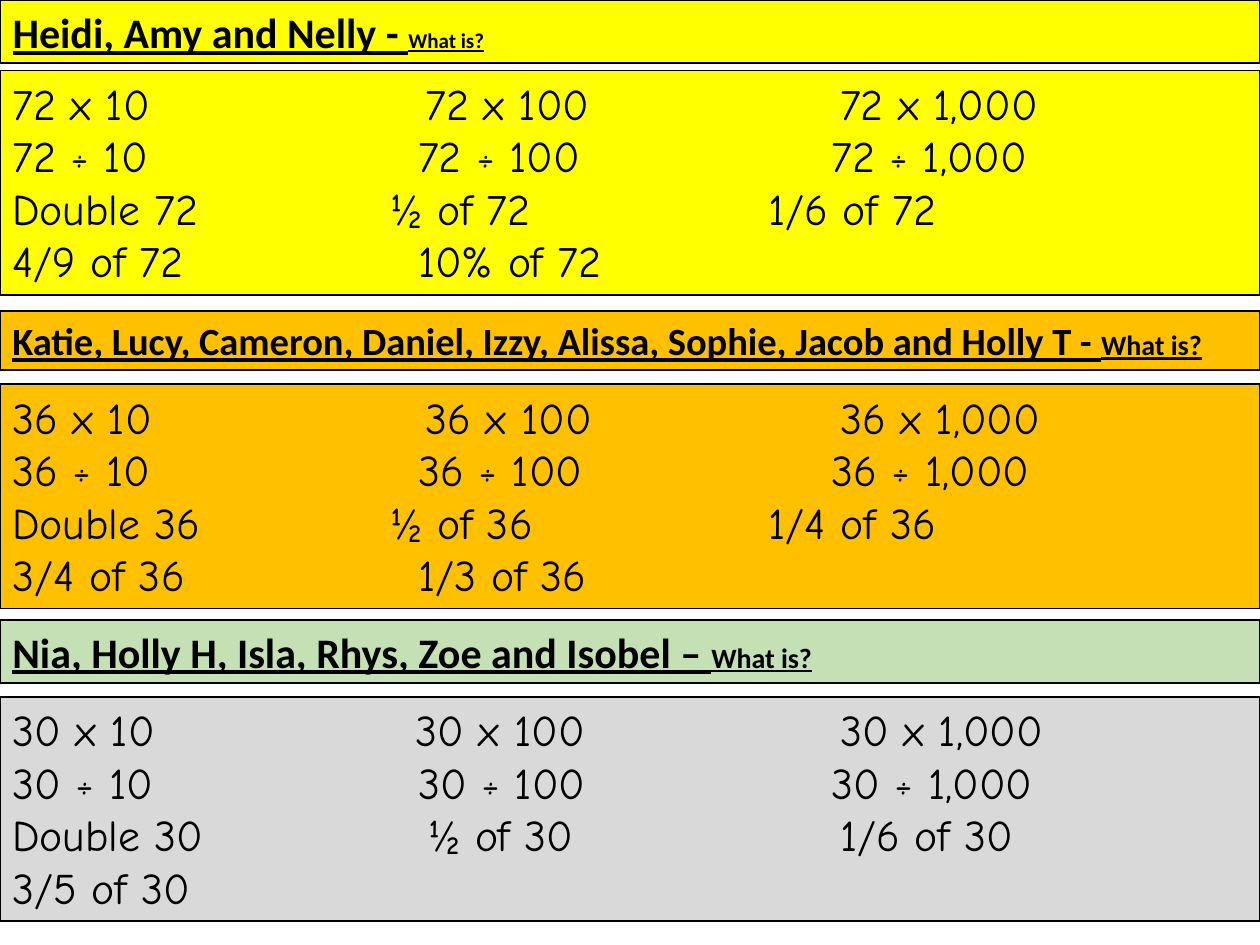
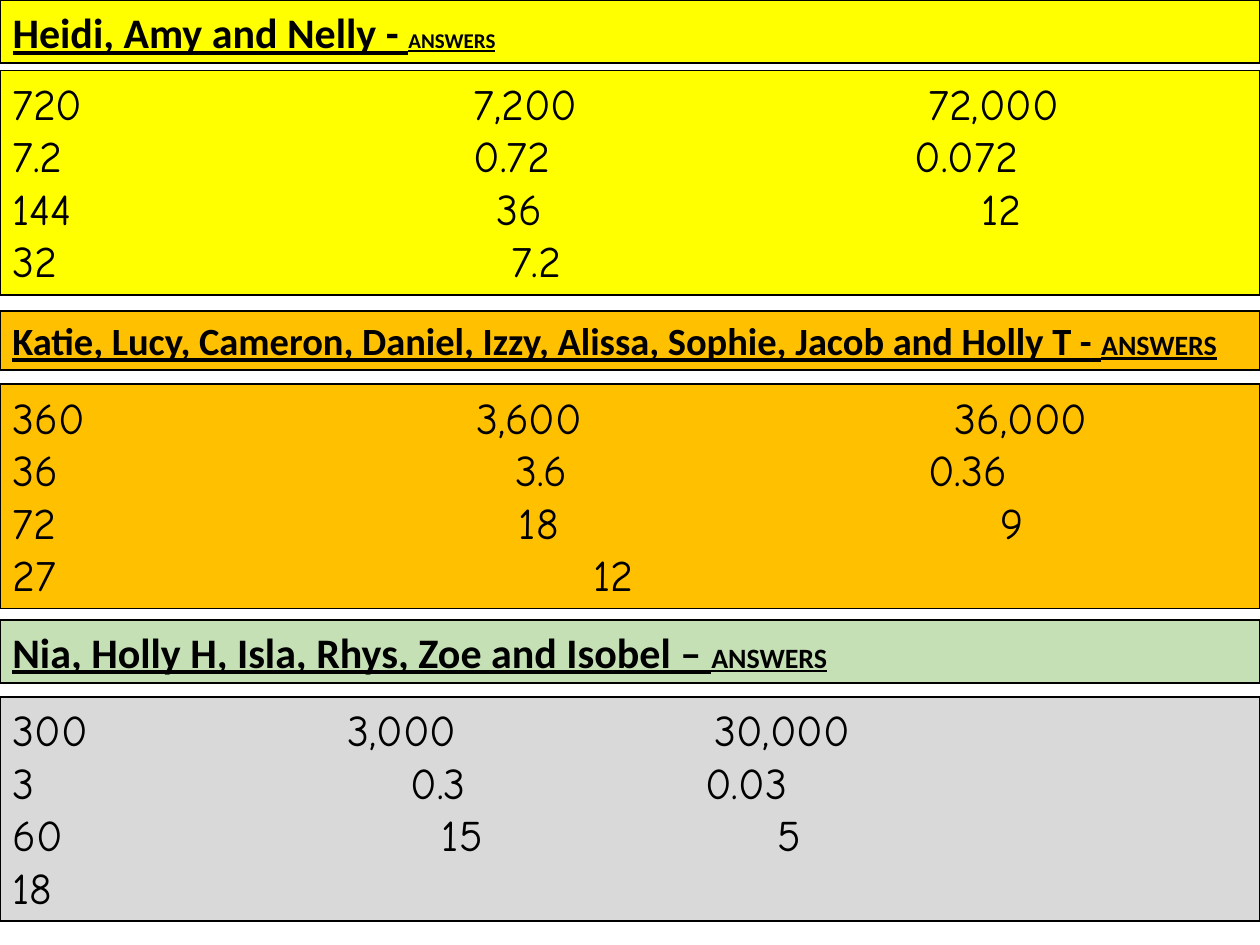
from lxml import etree
from pptx import Presentation
from pptx.dml.color import RGBColor
from pptx.enum.shapes import MSO_SHAPE
from pptx.enum.text import MSO_ANCHOR, MSO_AUTO_SIZE, PP_ALIGN
from pptx.oxml.ns import qn
from pptx.util import Inches, Pt

RECTANGLE = MSO_SHAPE.RECTANGLE
TOP = MSO_ANCHOR.TOP
LEFT = PP_ALIGN.LEFT
FIXED = MSO_AUTO_SIZE.NONE

WIDTH, HEIGHT = 10, 7.5
GRID_HEIGHT = 1.78
TITLE_ONLY = 5
BLACK = "000000"
HEADING_FONT, GRID_FONT = "Calibri", "Comic Neue"
GRID_SIZE = 25

GROUPS = [
    dict(names="Heidi, Amy and Nelly - ", size=24, label_size=12,
         band="FFFF00", panel="FFFF00", top=0, height=0.5, grid_top=0.56),
    dict(names="Katie, Lucy, Cameron, Daniel, Izzy, Alissa, Sophie, Jacob and Holly T - ",
         size=22, label_size=16,
         band="FFC000", panel="FFC000", top=2.47, height=0.47, grid_top=3.05),
    dict(names="Nia, Holly H, Isla, Rhys, Zoe and Isobel – ", size=24, label_size=16,
         band="C5E0B4", panel="D9D9D9", top=4.92, height=0.5, grid_top=5.53),
]

QUESTION_STOPS = [(3.28, 6.57), (3.22, 6.5), (3, 6), (3.22,)]
QUESTIONS = [
    (QUESTION_STOPS, [
        ("72 x 10", "72 x 100", "72 x 1,000"),
        ("72 ÷ 10", "72 ÷ 100", "72 ÷ 1,000"),
        ("Double 72", "½ of 72", "1/6 of 72"),
        ("4/9 of 72", "10% of 72"),
    ]),
    (QUESTION_STOPS, [
        ("36 x 10", "36 x 100", "36 x 1,000"),
        ("36 ÷ 10", "36 ÷ 100", "36 ÷ 1,000"),
        ("Double 36", "½ of 36", "1/4 of 36"),
        ("3/4 of 36", "1/3 of 36"),
    ]),
    ([(3.2, 6.57), (3.22, 6.5), (3.3, 6.57), ()], [
        ("30 x 10", "30 x 100", "30 x 1,000"),
        ("30 ÷ 10", "30 ÷ 100", "30 ÷ 1,000"),
        ("Double 30", "½ of 30", "1/6 of 30"),
        ("3/5 of 30",),
    ]),
]
ANSWERS = [
    ([(3.66, 7.27), (3.66, 7.16), (3.84, 7.69), (3.96,)], [
        ("720", "7,200", "72,000"),
        ("7.2", "0.72", "0.072"),
        ("144", "36", "12"),
        ("32", "7.2"),
    ]),
    ([(3.68, 7.48), (3.99, 7.27), (4.02, 7.84), (4.61,)], [
        ("360", "3,600", "36,000"),
        ("36", "3.6", "0.36"),
        ("72", "18", "9"),
        ("27", "12"),
    ]),
    ([(2.66, 5.57), (3.16, 5.5), (3.41, 6.07), ()], [
        ("300", "3,000", "30,000"),
        ("3", "0.3", "0.03"),
        ("60", "15", "5"),
        ("18",),
    ]),
]
PAGES = [("What is?", QUESTIONS), ("ANSWERS", ANSWERS)]


def color(value):
    return RGBColor.from_string(value)


def style_band(box, top, height, fill):
    box.left, box.top = 0, Inches(top)
    box.width, box.height = Inches(WIDTH), Inches(height)
    box.fill.solid()
    box.fill.fore_color.rgb = color(fill)
    box.line.color.rgb = color(BLACK)
    box.line.width = Pt(1)
    box.shadow.inherit = False
    frame = box.text_frame
    frame.word_wrap = True
    frame.auto_size = FIXED
    frame.vertical_anchor = TOP
    return frame


deck = Presentation()
deck.slide_width, deck.slide_height = Inches(WIDTH), Inches(HEIGHT)

for label, grids in PAGES:
    page = deck.slides.add_slide(deck.slide_layouts[TITLE_ONLY])
    for group, (stops, rows) in zip(GROUPS, grids):
        if group is GROUPS[0]:
            heading = page.shapes.title
        else:
            heading = page.shapes.add_shape(RECTANGLE, 0, 0, 0, 0)
        frame = style_band(heading, group["top"], group["height"], group["band"])
        para = frame.paragraphs[0]
        para.alignment = LEFT
        para.font.name = HEADING_FONT
        para.font.bold = True
        para.font.underline = True
        para.font.color.rgb = color(BLACK)
        for text, size in ((group["names"], group["size"]), (label, group["label_size"])):
            span = para.add_run()
            span.text = text
            span.font.size = Pt(size)

        panel = page.shapes.add_shape(RECTANGLE, 0, 0, 0, 0)
        frame = style_band(panel, group["grid_top"], GRID_HEIGHT, group["panel"])
        for index, (row, row_stops) in enumerate(zip(rows, stops)):
            para = frame.add_paragraph() if index else frame.paragraphs[0]
            para.text = "\t".join(row)
            para.alignment = LEFT
            para.font.name = GRID_FONT
            para.font.size = Pt(GRID_SIZE)
            para.font.color.rgb = color(BLACK)
            if row_stops:
                tabs = etree.Element(qn("a:tabLst"))
                for stop in row_stops:
                    etree.SubElement(tabs, qn("a:tab"), pos=str(Inches(stop)), algn="l")
                para._p.get_or_add_pPr().insert(0, tabs)

deck.save("out.pptx")
